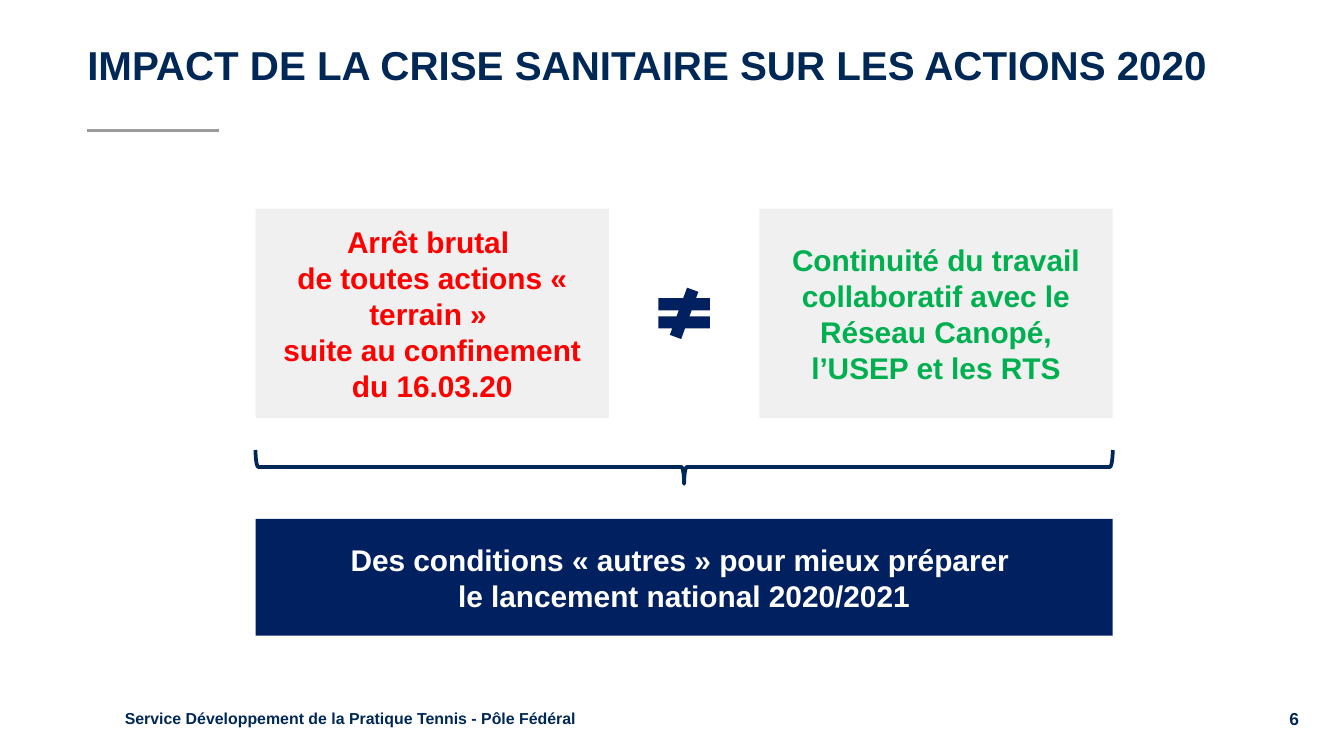
from dataclasses import dataclass

import pptx
import pptx.dml.color
import pptx.enum.shapes
import pptx.enum.text
import pptx.oxml.ns
import pptx.util
from lxml import etree

Cm = pptx.util.Cm
Pt = pptx.util.Pt
Shapes = pptx.enum.shapes.MSO_SHAPE
Align = pptx.enum.text.PP_ALIGN
Anchor = pptx.enum.text.MSO_ANCHOR

FONT = "Arial"
NAVY = "002857"
DEEP_BLUE = "002060"
PALE_GREY = "F0F0F0"

# Shared layout, in centimetres
LEFT, TOP = 4.83, 3.94
CARD_WIDTH, CARD_HEIGHT = 6.68, 3.96
FULL_WIDTH = 16.2


@dataclass
class Label:
    left: float
    top: float
    width: float
    height: float
    lines: list[str]
    size: float
    color: str = NAVY
    align: Align = Align.LEFT
    anchor: Anchor = Anchor.MIDDLE
    fill: str | None = None


def rgb(color: str) -> pptx.dml.color.RGBColor:
    return pptx.dml.color.RGBColor.from_string(color)


def add_preset(slide, kind: Shapes, left: float, top: float, width: float,
               height: float, fill: str | None = None):
    shape = slide.shapes.add_shape(kind, Cm(left), Cm(top), Cm(width), Cm(height))
    shape.shadow.inherit = False
    shape.line.fill.background()
    if fill:
        shape.fill.solid()
        shape.fill.fore_color.rgb = rgb(fill)
    else:
        shape.fill.background()
    return shape


def add_label(slide, label: Label) -> None:
    place = (label.left, label.top, label.width, label.height)
    if label.fill:
        holder = add_preset(slide, Shapes.RECTANGLE, *place, label.fill)
    else:
        holder = slide.shapes.add_textbox(*map(Cm, place))
    frame = holder.text_frame
    frame.word_wrap = True
    frame.vertical_anchor = label.anchor
    for index, line in enumerate(label.lines):
        paragraph = frame.add_paragraph() if index else frame.paragraphs[0]
        paragraph.alignment = label.align
        run = paragraph.add_run()
        run.text = line
        run.font.name = FONT
        run.font.size = Pt(label.size)
        run.font.bold = True
        run.font.color.rgb = rgb(label.color)


def add_rule(slide, left: float, right: float, top: float) -> None:
    rule = slide.shapes.add_connector(
        pptx.enum.shapes.MSO_CONNECTOR.STRAIGHT, Cm(left), Cm(top), Cm(right), Cm(top))
    rule.line.color.rgb = rgb("9B9B9B")
    rule.line.width = Pt(1.5)
    etree.SubElement(rule._element.spPr, pptx.oxml.ns.qn("a:effectLst"))


def add_brace_below(slide, left: float, top: float, width: float, depth: float) -> None:
    # A left brace turned a quarter, placed by the centre of its turned frame
    brace = add_preset(slide, Shapes.LEFT_BRACE, left + (width - depth) / 2,
                       top + (depth - width) / 2, depth, width)
    brace.rotation = 270
    brace.line.color.rgb = rgb(NAVY)
    brace.line.width = Pt(2)


def main() -> None:
    presentation = pptx.Presentation()
    presentation.slide_width = Cm(25.4)
    presentation.slide_height = Cm(14.28)
    slide = presentation.slides.add_slide(presentation.slide_layouts[6])

    # Footer, page number and title
    frame_labels = [
        Label(2.11, 13.28, 11.73, 0.58,
              ["Service Développement de la Pratique Tennis - Pôle Fédéral"], 8.5),
        Label(17.15, 13.28, 7.65, 0.58, ["6"], 9.3, align=Align.RIGHT),
        Label(1.4, 0.63, 22.23, 0.86,
              ["IMPACT DE LA CRISE SANITAIRE SUR LES ACTIONS 2020"], 21.6,
              anchor=Anchor.TOP),
    ]
    # Two opposed situations and the conclusion
    message_labels = [
        Label(LEFT, TOP, CARD_WIDTH, CARD_HEIGHT,
              ["Arrêt brutal ", "de toutes actions « terrain » ",
               "suite au confinement du 16.03.20"],
              16, "FF0000", Align.CENTER, fill=PALE_GREY),
        Label(LEFT + FULL_WIDTH - CARD_WIDTH, TOP, CARD_WIDTH, CARD_HEIGHT,
              ["Continuité du travail collaboratif avec le Réseau Canopé, "
               "l’USEP et les RTS"],
              16, "00B050", Align.CENTER, fill=PALE_GREY),
        Label(LEFT, 9.8, FULL_WIDTH, 2.21,
              ["Des conditions « autres » pour mieux préparer ",
               "le lancement national 2020/2021"],
              16, "FFFFFF", Align.CENTER, fill=DEEP_BLUE),
    ]
    for label in frame_labels + message_labels:
        add_label(slide, label)
    add_rule(slide, 1.65, 4.14, 2.46)

    # Signs that link the messages
    sign_width, sign_height = 1.32, 0.97
    add_preset(slide, Shapes.MATH_NOT_EQUAL, LEFT + (FULL_WIDTH - sign_width) / 2,
               TOP + (CARD_HEIGHT - sign_height) / 2, sign_width, sign_height, DEEP_BLUE)
    add_brace_below(slide, LEFT, 8.5, FULL_WIDTH, 0.64)

    presentation.save("out.pptx")


if __name__ == "__main__":
    main()
